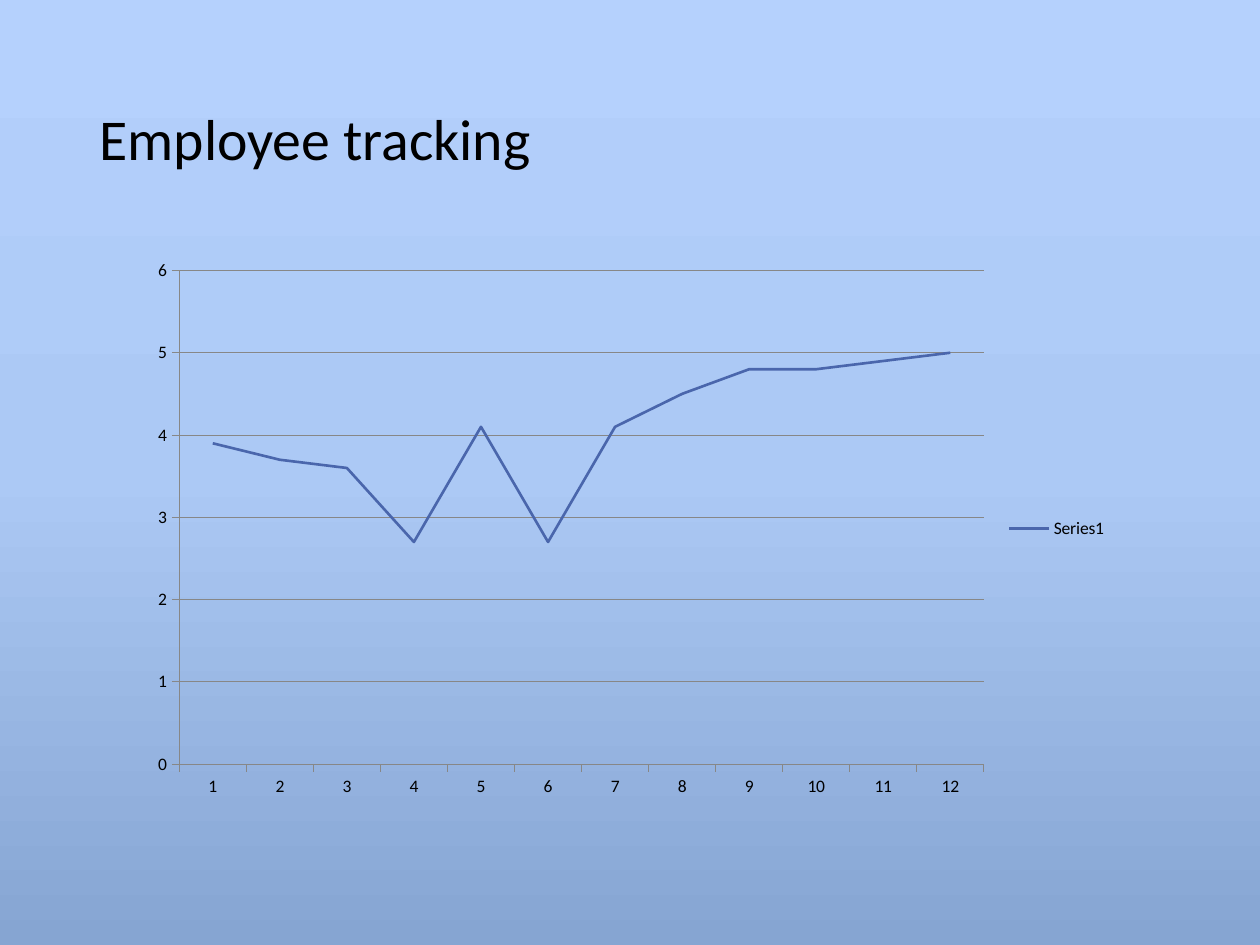
from copy import deepcopy

from pptx import Presentation
from pptx.chart.data import CategoryChartData
from pptx.dml.color import RGBColor
from pptx.enum.chart import XL_CHART_TYPE, XL_LEGEND_POSITION, XL_MARKER_STYLE, XL_TICK_MARK
from pptx.enum.text import MSO_ANCHOR, PP_ALIGN
from pptx.oxml.ns import qn
from pptx.util import Inches, Pt

FONT = "Calibri"
BLACK = RGBColor(0x00, 0x00, 0x00)
GREY = RGBColor(0x87, 0x87, 0x87)
BLUE = RGBColor(0x4A, 0x66, 0xAC)
SKY_STOPS = (
    (0, RGBColor(0xB5, 0xD1, 0xFD)),
    (0.5, RGBColor(0xAC, 0xC9, 0xF5)),
    (1, RGBColor(0x86, 0xA5, 0xD2)),
)
TITLE_BOX = (Inches(0.69), Inches(0.4), Inches(8.62), Inches(1.45))
CHART_BOX = (Inches(1.1), Inches(1.98), Inches(7.79), Inches(4.43))
RATINGS = (3.9, 3.7, 3.6, 2.7, 4.1, 2.7, 4.1, 4.5, 4.8, 4.8, 4.9, 5)


def apply_format(target, values):
    """Set each named attribute on the target."""
    for name, value in values.items():
        setattr(target, name, value)


def style_line(line, color, width):
    """Give a line its colour and width."""
    line.color.rgb = color
    line.width = width


def paint_background(page):
    """Fill the page with a three-stop gradient running downwards."""
    fill = page.background.fill
    fill.gradient()
    fill.gradient_angle = 270
    stop_list = next(page.element.iter(qn("a:gsLst")))
    stop_list.append(deepcopy(stop_list[-1]))
    for stop, (position, color) in zip(fill.gradient_stops, SKY_STOPS):
        stop.position = position
        stop.color.rgb = color


def place_title(page, box, text):
    """Move and format the title placeholder."""
    title = page.shapes.title
    apply_format(title, dict(zip(("left", "top", "width", "height"), box)))
    frame = title.text_frame
    apply_format(frame, {"text": text, "vertical_anchor": MSO_ANCHOR.MIDDLE, "word_wrap": True})
    para = frame.paragraphs[0]
    apply_format(para, {"alignment": PP_ALIGN.LEFT, "line_spacing": 0.9})
    span = para.runs[0]
    apply_format(span.font, {"name": FONT, "size": Pt(33)})
    span.font.color.rgb = BLACK


def place_chart(page, box):
    """Add the line chart of monthly ratings."""
    data = CategoryChartData()
    data.categories = [str(month) for month in range(1, len(RATINGS) + 1)]
    data.add_series("Series1", RATINGS)
    chart = page.shapes.add_chart(XL_CHART_TYPE.LINE, *box, data).chart
    apply_format(chart, {"has_title": False, "has_legend": True})
    apply_format(chart.font, {"name": FONT, "size": Pt(10)})
    chart.font.color.rgb = BLACK
    apply_format(chart.legend, {"position": XL_LEGEND_POSITION.RIGHT, "include_in_layout": False})

    for axis in (chart.category_axis, chart.value_axis):
        apply_format(axis, {"major_tick_mark": XL_TICK_MARK.OUTSIDE,
                            "minor_tick_mark": XL_TICK_MARK.NONE})
        style_line(axis.format.line, GREY, Pt(0.5))
    scale = {"minimum_scale": 0, "maximum_scale": 6, "major_unit": 1, "has_major_gridlines": True}
    apply_format(chart.value_axis, scale)
    style_line(chart.value_axis.major_gridlines.format.line, GREY, Pt(0.5))

    plot = chart.plots[0]
    plot.vary_by_categories = False
    series = plot.series[0]
    series.smooth = False
    series.marker.style = XL_MARKER_STYLE.NONE
    style_line(series.format.line, BLUE, Pt(1.5))


def main():
    """Build and save the deck."""
    deck = Presentation()
    apply_format(deck, {"slide_width": Inches(10), "slide_height": Inches(7.5)})
    page = deck.slides.add_slide(deck.slide_layouts.get_by_name("Title Only"))
    paint_background(page)
    place_title(page, TITLE_BOX, "Employee tracking")
    place_chart(page, CHART_BOX)
    deck.save("out.pptx")


if __name__ == "__main__":
    main()
